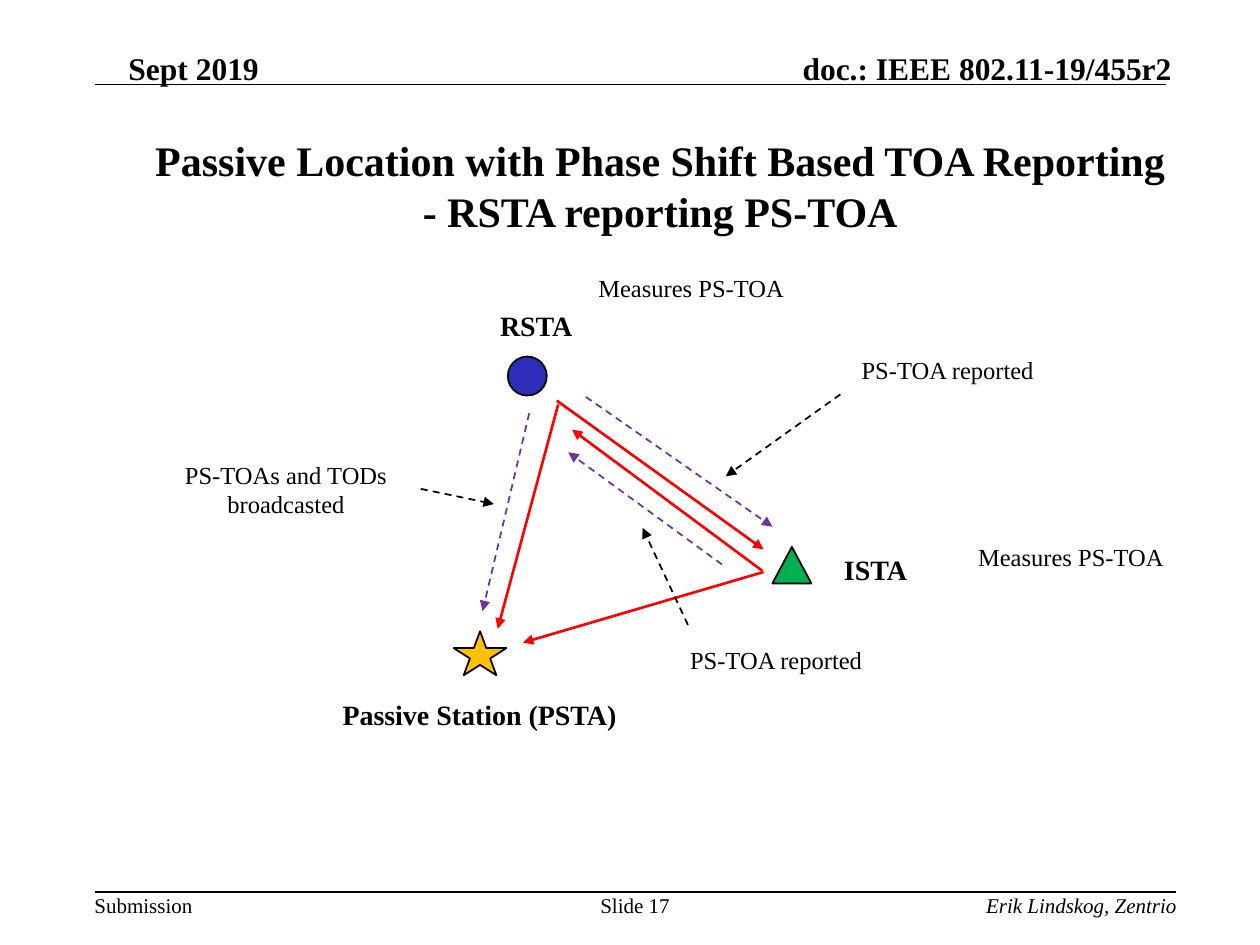
from dataclasses import dataclass

from lxml.etree import SubElement
from pptx import Presentation
from pptx.dml.color import RGBColor
from pptx.enum.dml import MSO_LINE_DASH_STYLE as Dash
from pptx.enum.shapes import MSO_CONNECTOR as Connector, MSO_SHAPE as Shape
from pptx.enum.text import MSO_ANCHOR as Anchor, PP_ALIGN as Align
from pptx.oxml.ns import qn
from pptx.util import Inches, Pt


@dataclass(frozen=True)
class Theme:
    font: str = "Times New Roman"
    ink: str = "000000"
    ranging: str = "FF0000"
    report: str = "7030A0"
    rsta: str = "2D2DB9"
    ista: str = "00B050"
    psta: str = "FFC000"
    title: int = 24
    header: int = 18
    station: int = 16
    note: int = 14
    footer: int = 12
    thin: float = 1
    thick: float = 1.5


THEME = Theme()
FLUSH = dict.fromkeys(
    ("margin_left", "margin_top", "margin_right", "margin_bottom"), 0)


def apply_format(target, values):
    for name, value in values.items():
        setattr(target, name, value)


def add_text(slide, box, lines, size, align=Align.LEFT, style=None, frame=None):
    text = slide.shapes.add_textbox(*map(Inches, box)).text_frame
    apply_format(text, {"word_wrap": True, **(frame or {})})
    for index, line in enumerate(lines):
        paragraph = text.add_paragraph() if index else text.paragraphs[0]
        paragraph.alignment = align
        run = paragraph.add_run()
        run.text = line
        apply_format(run.font, {"name": THEME.font, "size": Pt(size), **(style or {})})
        run.font.color.rgb = RGBColor.from_string(THEME.ink)


def add_line(slide, start, end, color=THEME.ink, width=THEME.thin, dash=None, arrow=True):
    connector = slide.shapes.add_connector(
        Connector.STRAIGHT, *map(Inches, start + end))
    apply_format(connector.line, {"width": Pt(width), "dash_style": dash})
    connector.line.color.rgb = RGBColor.from_string(color)
    properties = connector._element.spPr
    if arrow:
        SubElement(properties.find(qn("a:ln")), qn("a:tailEnd"), type="triangle")
    SubElement(properties, qn("a:effectLst"))


def add_station(slide, outline, box, color):
    station = slide.shapes.add_shape(outline, *map(Inches, box))
    station.shadow.inherit = False
    station.fill.solid()
    station.fill.fore_color.rgb = RGBColor.from_string(color)
    station.line.width = Pt(THEME.thin)
    station.line.color.rgb = RGBColor.from_string(THEME.ink)


def add_page_frame(slide):
    add_line(slide, (0.75, 0.67), (9.25, 0.67), arrow=False)
    add_line(slide, (0.75, 7.08), (9.33, 7.08), arrow=False)
    heading = {**FLUSH, "vertical_anchor": Anchor.BOTTOM}
    for box, line, align in (
        ((1.02, 0.39, 2, 0.3), "Sept 2019", Align.LEFT),
        ((5.3, 0.39, 4, 0.3), "doc.: IEEE 802.11-19/455r2", Align.RIGHT),
    ):
        add_text(slide, box, [line], THEME.header, align, {"bold": True}, heading)
    for box, line, align, style in (
        ((0.75, 7.08, 0.9, 0.2), "Submission", Align.LEFT, {}),
        ((4.75, 7.08, 0.58, 0.2), "Slide 17", Align.CENTER, {}),
        ((5.86, 7.08, 3.48, 0.2), "Erik Lindskog, Zentrio", Align.RIGHT, {"italic": True}),
    ):
        add_text(slide, box, [line], THEME.footer, align, style,
                 {**FLUSH, "word_wrap": False})


def add_stations(slide):
    for outline, box, color, name, name_box in (
        (Shape.OVAL, (4.03, 2.83, 0.31, 0.31), THEME.rsta,
         "RSTA", (3.87, 2.4, 0.78, 0.37)),
        (Shape.ISOSCELES_TRIANGLE, (6.13, 4.34, 0.31, 0.29), THEME.ista,
         "ISTA", (6.6, 4.34, 1.03, 0.37)),
        (Shape.STAR_5_POINT, (3.6, 5.01, 0.42, 0.35), THEME.psta,
         "Passive Station (PSTA)", (2.62, 5.49, 2.42, 0.37)),
    ):
        add_station(slide, outline, box, color)
        add_text(slide, name_box, [name], THEME.station, style={"bold": True})


def add_signals(slide):
    for start, end in (
        ((6.06, 4.54), (4.15, 5.1)),
        ((4.42, 3.18), (6.06, 4.36)),
        ((6.05, 4.53), (4.54, 3.41)),
        ((4.43, 3.21), (3.95, 4.99)),
    ):
        add_line(slide, start, end, THEME.ranging, THEME.thick)
    for start, end in (
        ((4.65, 3.15), (6.13, 4.18)),
        ((4.2, 3.28), (3.83, 4.85)),
        ((5.73, 4.48), (4.51, 3.59)),
    ):
        add_line(slide, start, end, THEME.report, dash=Dash.DASH)


def add_notes(slide):
    for start, end in (
        ((6.67, 3.13), (5.76, 3.78)),
        ((3.34, 3.88), (3.92, 4)),
        ((5.46, 4.96), (5.1, 4.19)),
    ):
        add_line(slide, start, end, dash=Dash.DASH)
    for box, line, align in (
        ((4.65, 2.12, 1.85, 0.34), "Measures PS-TOA", Align.LEFT),
        ((7.51, 4.25, 1.98, 0.34), "Measures PS-TOA", Align.CENTER),
        ((6.74, 2.77, 1.76, 0.34), "PS-TOA reported", Align.LEFT),
        ((5.1, 5.07, 2.12, 0.34), "PS-TOA reported", Align.CENTER),
        ((1.19, 3.6, 2.16, 0.57), "PS-TOAs and TODs broadcasted", Align.CENTER),
    ):
        add_text(slide, box, [line], THEME.note, align)


def main():
    deck = Presentation()
    apply_format(deck, {"slide_width": Inches(10), "slide_height": Inches(7.5)})
    slide = deck.slides.add_slide(deck.slide_layouts[6])
    add_page_frame(slide)
    add_text(slide, (1.09, 1.02, 8.3, 0.91),
             ["Passive Location with Phase Shift Based TOA Reporting",
              "- RSTA reporting PS-TOA"],
             THEME.title, Align.CENTER, {"bold": True}, {"word_wrap": False})
    add_stations(slide)
    add_signals(slide)
    add_notes(slide)
    deck.save("out.pptx")


if __name__ == "__main__":
    main()
